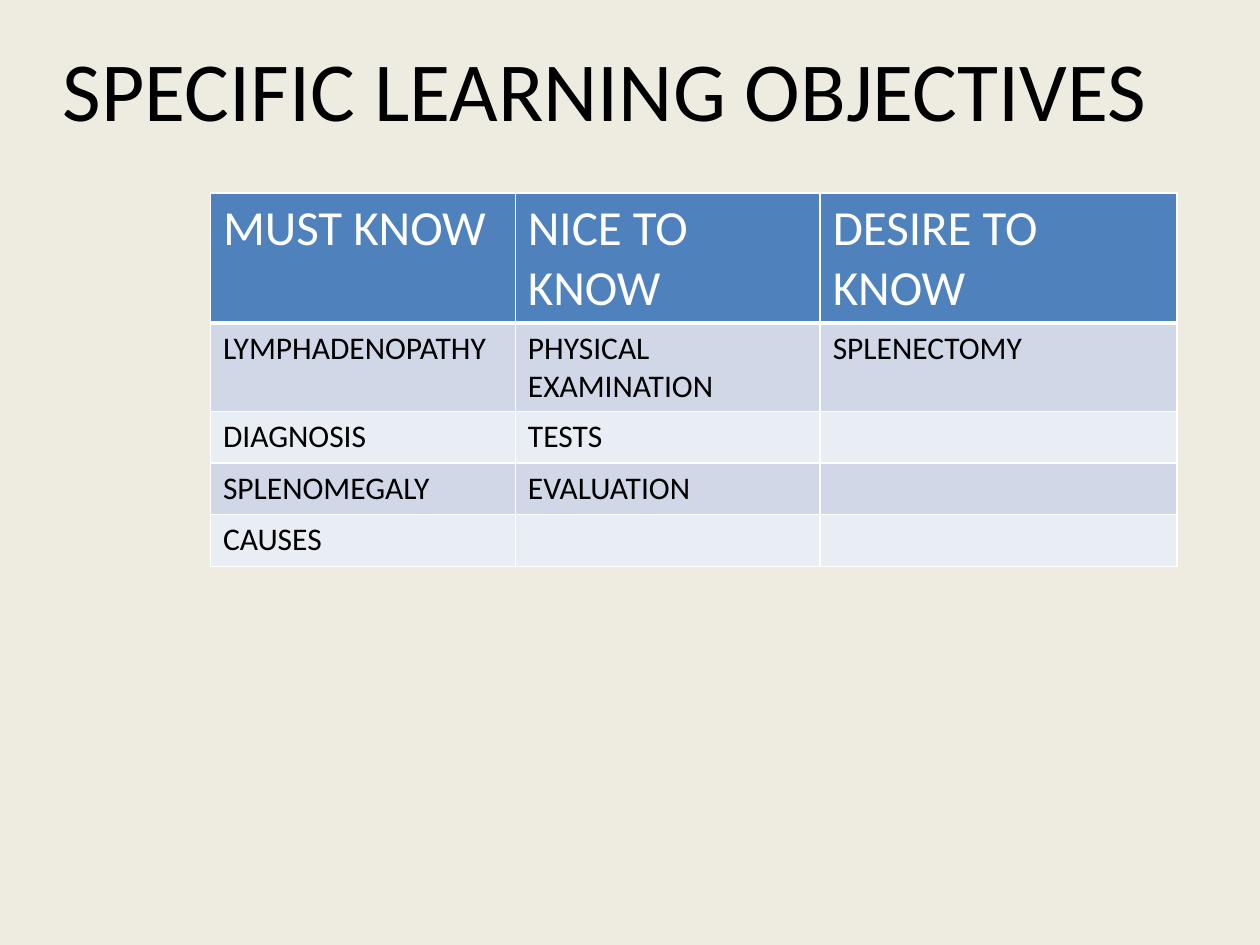
"""Build the learning objectives slide with a three-column table."""
from lxml import etree
from pptx import Presentation
from pptx.dml.color import RGBColor
from pptx.oxml.ns import qn
from pptx.util import Inches, Pt

TITLE = "SPECIFIC LEARNING OBJECTIVES"
ROWS = [
    ("MUST KNOW", "NICE TO KNOW", "DESIRE TO KNOW"),
    ("LYMPHADENOPATHY", "PHYSICAL EXAMINATION", "SPLENECTOMY"),
    ("DIAGNOSIS", "TESTS", ""),
    ("SPLENOMEGALY", "EVALUATION", ""),
    ("CAUSES", "", ""),
]
COLUMN_WIDTHS = (2.42, 2.42, 2.83)
ROW_HEIGHT = 0.41
TABLE_LEFT, TABLE_TOP = 1.67, 1.53
BACKGROUND, HEADER_FILL = "EEECE1", "4F81BD"
BAND_FILLS = ("D0D8E8", "E9EDF4")
WHITE, BLACK = "FFFFFF", "000000"
FONT = "Calibri"


def color(value):
    return RGBColor.from_string(value)


def add_text(text_frame, text, size, text_color):
    run = text_frame.paragraphs[0].add_run()
    run.text = text
    font = run.font
    font.name, font.size, font.bold = FONT, Pt(size), False
    font.color.rgb = color(text_color)


def set_borders(cell, widths):
    properties = cell._tc.get_or_add_tcPr()
    for side, width in zip("LRTB", widths):
        line = etree.SubElement(properties, qn(f"a:ln{side}"), w=str(Pt(width)))
        fill = etree.SubElement(line, qn("a:solidFill"))
        etree.SubElement(fill, qn("a:srgbClr"), val=WHITE)


def add_title(slide):
    shape = slide.shapes.add_textbox(Inches(0.5), Inches(0.3), Inches(9), Inches(0.81))
    frame = shape.text_frame
    frame.word_wrap = True
    frame.margin_left = frame.margin_right = frame.margin_top = frame.margin_bottom = 0
    add_text(frame, TITLE, 48, BLACK)


def add_objectives(slide):
    table = slide.shapes.add_table(
        len(ROWS), len(COLUMN_WIDTHS), Inches(TABLE_LEFT), Inches(TABLE_TOP),
        Inches(sum(COLUMN_WIDTHS)), Inches(ROW_HEIGHT * len(ROWS))).table
    for column, width in zip(table.columns, COLUMN_WIDTHS):
        column.width = Inches(width)
    for row_index, texts in enumerate(ROWS):
        header = row_index == 0
        fill = HEADER_FILL if header else BAND_FILLS[(row_index - 1) % 2]
        size, text_color = (28, WHITE) if header else (18, BLACK)
        top, bottom = 3 if row_index == 1 else 1, 3 if header else 1
        for column_index, text in enumerate(texts):
            cell = table.cell(row_index, column_index)
            set_borders(cell, (1, 1, top, bottom))
            cell.fill.solid()
            cell.fill.fore_color.rgb = color(fill)
            if text:
                add_text(cell.text_frame, text, size, text_color)


def main():
    presentation = Presentation()
    presentation.slide_width, presentation.slide_height = Inches(10), Inches(7.5)
    slide = presentation.slides.add_slide(presentation.slide_layouts[6])
    slide.background.fill.solid()
    slide.background.fill.fore_color.rgb = color(BACKGROUND)
    add_title(slide)
    add_objectives(slide)
    presentation.save("out.pptx")


if __name__ == "__main__":
    main()
